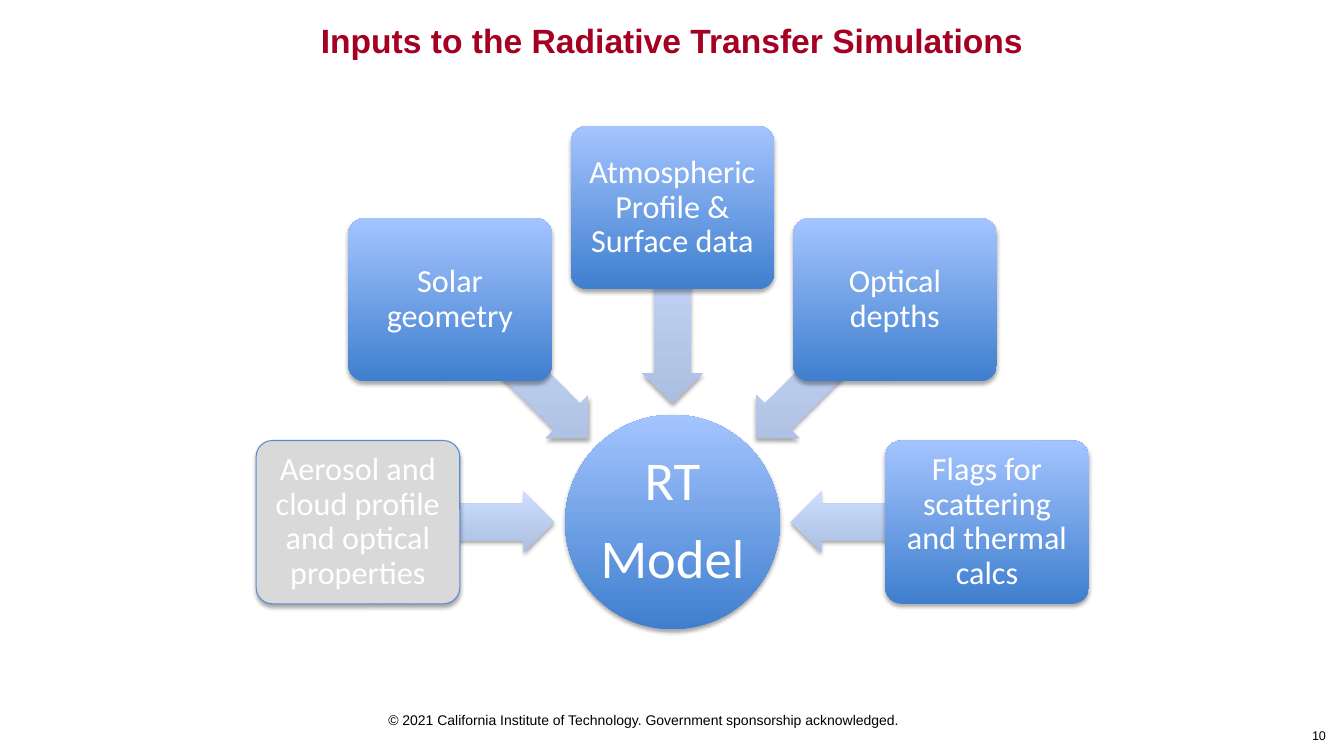
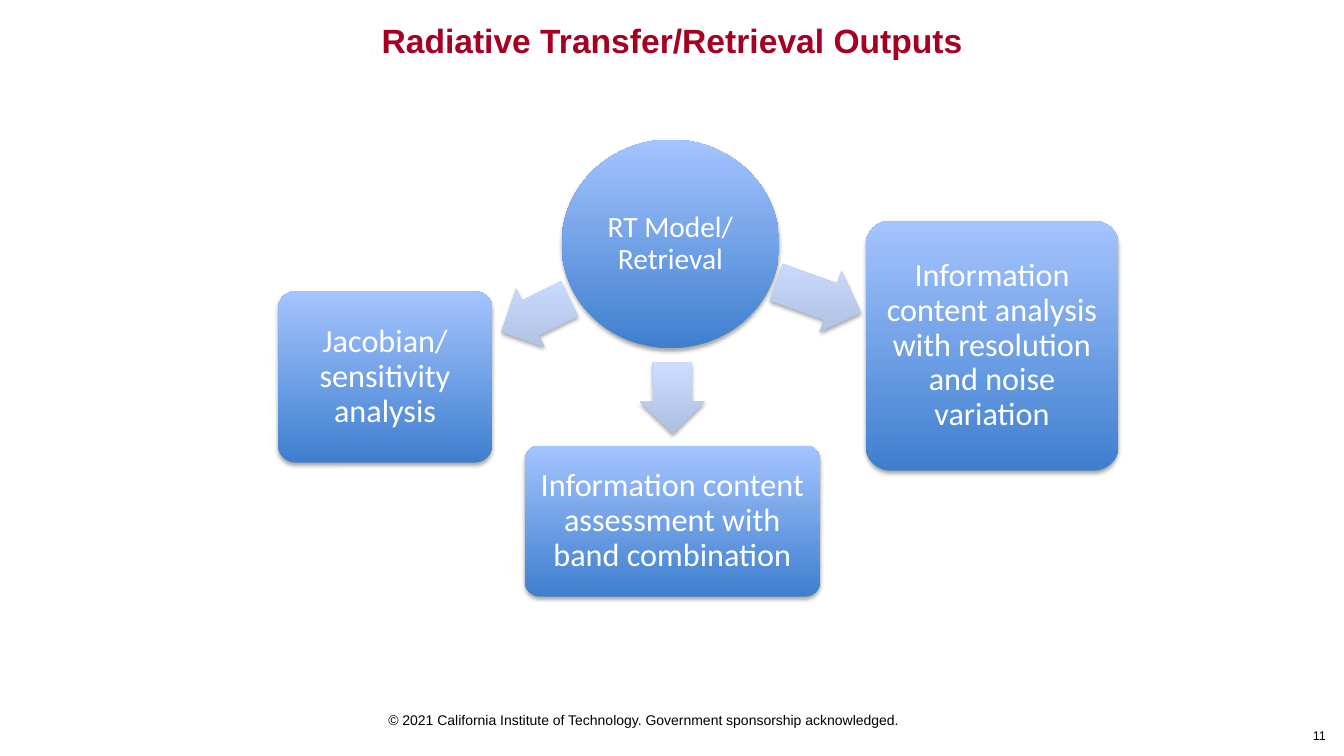
import math

import pptx
import pptx.dml.color
import pptx.enum.shapes
import pptx.enum.text
import pptx.oxml
import pptx.oxml.ns
import pptx.util

Inches = pptx.util.Inches
Pt = pptx.util.Pt
RGBColor = pptx.dml.color.RGBColor
MSO_SHAPE = pptx.enum.shapes.MSO_SHAPE
MSO_ANCHOR = pptx.enum.text.MSO_ANCHOR
PP_ALIGN = pptx.enum.text.PP_ALIGN

CRIMSON = RGBColor(0xA5, 0x00, 0x21)
BLACK = RGBColor(0x00, 0x00, 0x00)
WHITE = RGBColor(0xFF, 0xFF, 0xFF)
GREY = RGBColor(0xD9, 0xD9, 0xD9)
OUTLINE = RGBColor(0x55, 0x8E, 0xD5)
NODE_GRADIENT = (RGBColor(0x3F, 0x7F, 0xCE), RGBColor(0xA4, 0xC4, 0xFF))
ARROW_GRADIENT = (RGBColor(0xAD, 0xBF, 0xE1), RGBColor(0xCC, 0xDD, 0xFF))

COPYRIGHT = "© 2021 California Institute of Technology. Government sponsorship acknowledged."
SHADOW = (
    f'<a:outerShdw {pptx.oxml.ns.nsdecls("a")} blurRad="{Pt(3.1)}" dist="{Pt(1.8)}" '
    'dir="5400000" rotWithShape="0"><a:srgbClr val="000000">'
    '<a:alpha val="35000"/></a:srgbClr></a:outerShdw>'
)


def write(holder, text, size, font, color, align=PP_ALIGN.CENTER, bold=False, spacing=None, gap=0):
    """Fill a shape with text, one paragraph per line, and format every run."""
    frame = holder.text_frame
    frame.text = text
    for index, paragraph in enumerate(frame.paragraphs):
        paragraph.alignment = align
        if spacing:
            paragraph.line_spacing = spacing
        if gap and index < len(frame.paragraphs) - 1:
            paragraph.space_after = Pt(gap)
        for run in paragraph.runs:
            run.font.size = Pt(size)
            run.font.name = font
            run.font.bold = bold
            run.font.color.rgb = color
    return frame


def set_margins(frame, inset):
    """Give a text frame the same inset on all sides, centred vertically."""
    frame.margin_left = frame.margin_right = Inches(inset)
    frame.margin_top = frame.margin_bottom = Inches(inset)
    frame.vertical_anchor = MSO_ANCHOR.MIDDLE
    frame.word_wrap = True


def add_label(slide, box, text, size, color=BLACK, **style):
    """Add a text box in Arial."""
    label = slide.shapes.add_textbox(*map(Inches, box))
    return write(label, text, size, "Arial", color, **style)


def add_frame(deck, title, number):
    """Add a slide with the shared title, copyright line and number."""
    slide = deck.slides.add_slide(deck.slide_layouts[6])
    add_label(slide, (3.7, 7.01, 5.36, 0.27), COPYRIGHT, 10).word_wrap = False
    heading = add_label(slide, (2.73, 0.24, 7.87, 0.36), title, 24, CRIMSON, bold=True, spacing=0.9)
    set_margins(heading, 0)
    page = add_label(slide, (12.11, 7.17, 1.14, 0.26), str(number), 9, align=PP_ALIGN.RIGHT)
    page.word_wrap = True
    return slide


def add_shaded(slide, kind, center, size, gradient):
    """Add a preset shape around a centre with an upright gradient and soft shadow."""
    (x, y), (width, height) = center, size
    shape = slide.shapes.add_shape(
        kind, Inches(x - width / 2), Inches(y - height / 2), Inches(width), Inches(height))
    shape.fill.gradient()
    shape.fill.gradient_angle = 90
    for stop, color in zip(shape.fill.gradient_stops, gradient):
        stop.color.rgb = color
    properties = shape.element.spPr
    properties.find(pptx.oxml.ns.qn("a:gradFill")).set("rotWithShape", "0")
    shape.line.fill.background()
    shape.shadow.inherit = False
    properties.find(pptx.oxml.ns.qn("a:effectLst")).append(pptx.oxml.parse_xml(SHADOW))
    return shape


def add_hub(slide, center, size, text, points, inset):
    """Add the central ellipse of a diagram."""
    hub = add_shaded(slide, MSO_SHAPE.OVAL, center, size, NODE_GRADIENT)
    set_margins(write(hub, text, points, "Calibri", WHITE, spacing=0.9, gap=0.35 * points), inset)


def add_node(slide, center, size, text, muted=False):
    """Add a rounded box, grey and outlined when muted."""
    node = add_shaded(slide, MSO_SHAPE.ROUNDED_RECTANGLE, center, size, NODE_GRADIENT)
    node.adjustments[0] = 0.1
    if muted:
        node.fill.solid()
        node.fill.fore_color.rgb = GREY
        node.line.color.rgb = OUTLINE
        node.line.width = Pt(0.75)
    set_margins(write(node, text, 23, "Calibri", WHITE, spacing=0.9), 0.05)


def add_arrow(slide, center, size, rotation):
    """Add a block arrow that points left before it is rotated."""
    arrow = add_shaded(slide, MSO_SHAPE.LEFT_ARROW, center, size, ARROW_GRADIENT)
    arrow.adjustments[0] = 0.6
    arrow.adjustments[1] = 0.5
    arrow.rotation = rotation


def from_center(center, radius, degrees):
    """Return the point at a radius and clockwise angle from a centre."""
    angle = math.radians(degrees)
    return center[0] + radius * math.cos(angle), center[1] + radius * math.sin(angle)


def build_inputs(deck):
    """Build the radial diagram of the inputs that feed the model."""
    slide = add_frame(deck, "Inputs to the Radiative Transfer Simulations", 10)
    model = (6.67, 5.18)
    add_hub(slide, model, (2.13, 2.13), "RT\nModel", 39, 0.03)
    inputs = [
        "Aerosol and cloud profile and optical properties",
        "Solar geometry",
        "Atmospheric Profile & Surface data",
        "Optical depths",
        "Flags for scattering and thermal calcs",
    ]
    for index, text in enumerate(inputs):
        angle = (180 + 45 * index) % 360
        add_arrow(slide, from_center(model, 2.15, angle), (1.95, 0.61), angle)
        add_node(slide, from_center(model, 3.12, angle), (2.02, 1.62), text, muted=index == 0)


def build_outputs(deck):
    """Build the diagram of the outputs that leave the model."""
    slide = add_frame(deck, "Radiative Transfer/Retrieval Outputs", 11)
    add_hub(slide, (6.65, 2.42), (2.16, 2.07), "RT Model/ Retrieval", 21, 0.01)
    outputs = [
        ("Jacobian/ sensitivity analysis", (3.82, 3.74), (2.12, 1.7), (5.31, 3.13), 0.75, 334),
        ("Information content assessment with band combination",
         (6.67, 5.17), (2.93, 1.5), (6.67, 3.95), 0.71, 269.5),
        ("Information content analysis with resolution and noise variation",
         (9.84, 3.43), (2.51, 2.48), (8.12, 2.95), 0.89, 199.9),
    ]
    for text, center, size, arrow_center, arrow_length, rotation in outputs:
        add_arrow(slide, arrow_center, (arrow_length, 0.64), rotation)
        add_node(slide, center, size, text)


def main():
    """Build and save the deck."""
    deck = pptx.Presentation()
    deck.slide_width = Inches(13.33)
    deck.slide_height = Inches(7.5)
    build_inputs(deck)
    build_outputs(deck)
    deck.save("out.pptx")


if __name__ == "__main__":
    main()
